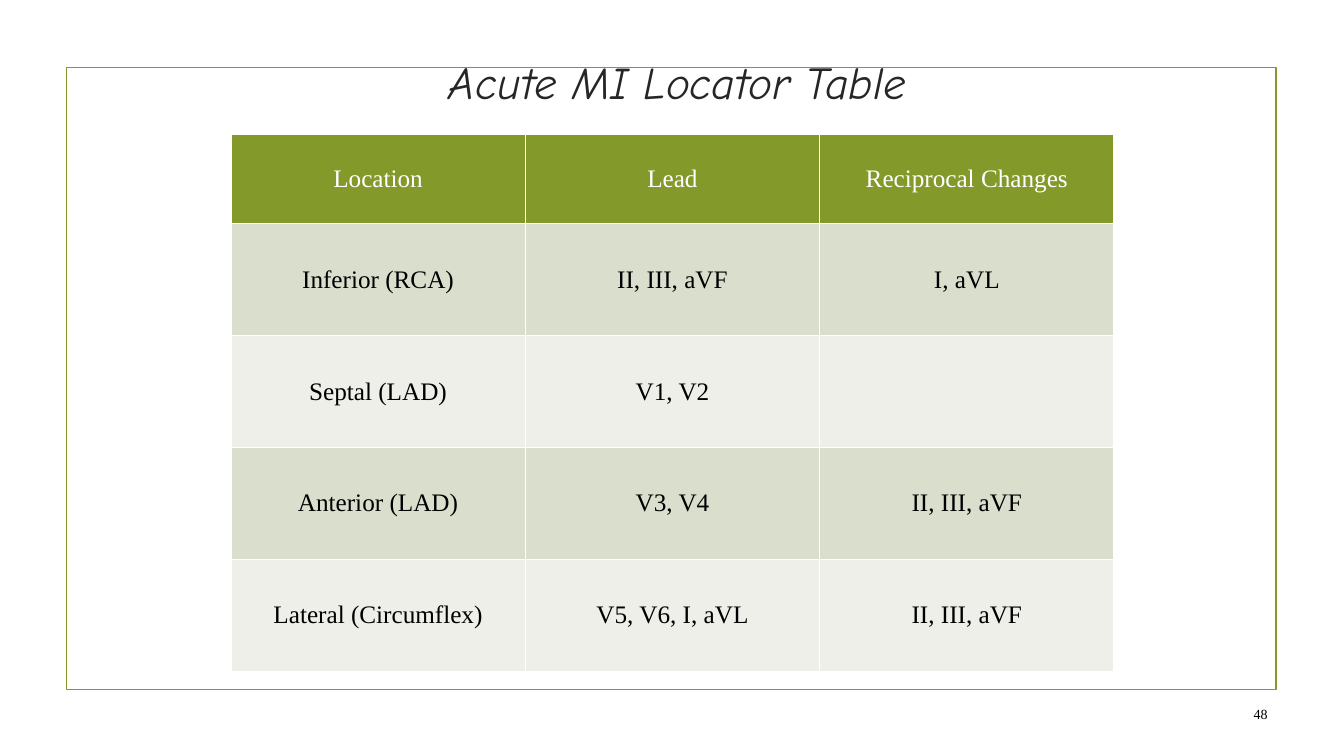
from lxml import etree
from pptx import Presentation
from pptx.dml.color import RGBColor
from pptx.enum.shapes import MSO_SHAPE
from pptx.enum.text import MSO_ANCHOR, MSO_AUTO_SIZE, PP_ALIGN
from pptx.oxml.ns import qn
from pptx.util import Inches, Pt

RECTANGLE = MSO_SHAPE.RECTANGLE
MIDDLE = MSO_ANCHOR.MIDDLE
NO_AUTOFIT = MSO_AUTO_SIZE.NONE
CENTER, RIGHT = PP_ALIGN.CENTER, PP_ALIGN.RIGHT

OLIVE = RGBColor(0x83, 0x99, 0x2A)
SAGE = RGBColor(0xD9, 0xDE, 0xCD)
PALE_SAGE = RGBColor(0xED, 0xEF, 0xE8)
WHITE = RGBColor(0xFF, 0xFF, 0xFF)
BLACK = RGBColor(0, 0, 0)
CHARCOAL = RGBColor(0x26, 0x26, 0x26)

SERIF = "Times New Roman"
LOCATOR_ROWS = [
    ("Location", "Lead", "Reciprocal Changes"),
    ("Inferior (RCA)", "II, III, aVF", "I, aVL"),
    ("Septal (LAD)", "V1, V2", ""),
    ("Anterior (LAD)", "V3, V4", "II, III, aVF"),
    ("Lateral (Circumflex)", "V5, V6, I, aVL", "II, III, aVF"),
]


def write_text(frame, text, alignment, color, formats):
    frame.text = text
    paragraph = frame.paragraphs[0]
    paragraph.alignment = alignment
    for run in paragraph.runs:
        run.font.color.rgb = color
        for attribute, value in formats.items():
            setattr(run.font, attribute, value)


def add_cell_borders(cell, color, width):
    properties = cell._tc.get_or_add_tcPr()
    for position, side in enumerate(("lnL", "lnR", "lnT", "lnB")):
        border = etree.Element(qn(f"a:{side}"), w=str(width))
        fill = etree.SubElement(border, qn("a:solidFill"))
        etree.SubElement(fill, qn("a:srgbClr"), val=str(color))
        properties.insert(position, border)


prs = Presentation()
prs.slide_width, prs.slide_height = Inches(13.33), Inches(7.5)
slide = prs.slides.add_slide(prs.slide_layouts[5])

border_frame = slide.shapes.add_shape(
    RECTANGLE, Inches(0.66), Inches(0.67), Inches(12), Inches(6.17))
border_frame.shadow.inherit = False
border_frame.fill.background()
border_frame.line.color.rgb = OLIVE
border_frame.line.width = Pt(1.25)

title = slide.shapes.title
title.left, title.top = Inches(2.22), Inches(0.5)
title.width, title.height = Inches(9), Inches(0.61)
title.text_frame.auto_size = NO_AUTOFIT
title.text_frame.vertical_anchor = MIDDLE
write_text(title.text_frame, "Acute MI Locator Table", CENTER, CHARCOAL,
           {"name": "Comic Neue", "size": Pt(32.4), "italic": True})

locator = slide.shapes.add_table(
    len(LOCATOR_ROWS), len(LOCATOR_ROWS[0]),
    Inches(2.29), Inches(1.33), Inches(8.75), Inches(5.33)).table
for column in locator.columns:
    column.width = Inches(2.92)
for row_number, labels in enumerate(LOCATOR_ROWS):
    is_header = row_number == 0
    locator.rows[row_number].height = Inches(0.89 if is_header else 1.11)
    row_fill = OLIVE if is_header else SAGE if row_number % 2 else PALE_SAGE
    for column_number, label in enumerate(labels):
        cell = locator.cell(row_number, column_number)
        cell.vertical_anchor = MIDDLE
        cell.fill.solid()
        cell.fill.fore_color.rgb = row_fill
        add_cell_borders(cell, WHITE, Pt(1))
        write_text(cell.text_frame, label, CENTER, WHITE if is_header else BLACK,
                   {"name": SERIF, "size": Pt(18), "bold": False})

page_number = slide.shapes.add_textbox(
    Inches(9.56), Inches(6.83), Inches(3.11), Inches(0.5)).text_frame
page_number.word_wrap = True
page_number.vertical_anchor = MIDDLE
write_text(page_number, "48", RIGHT, BLACK, {"name": SERIF, "size": Pt(10)})

prs.save("out.pptx")
